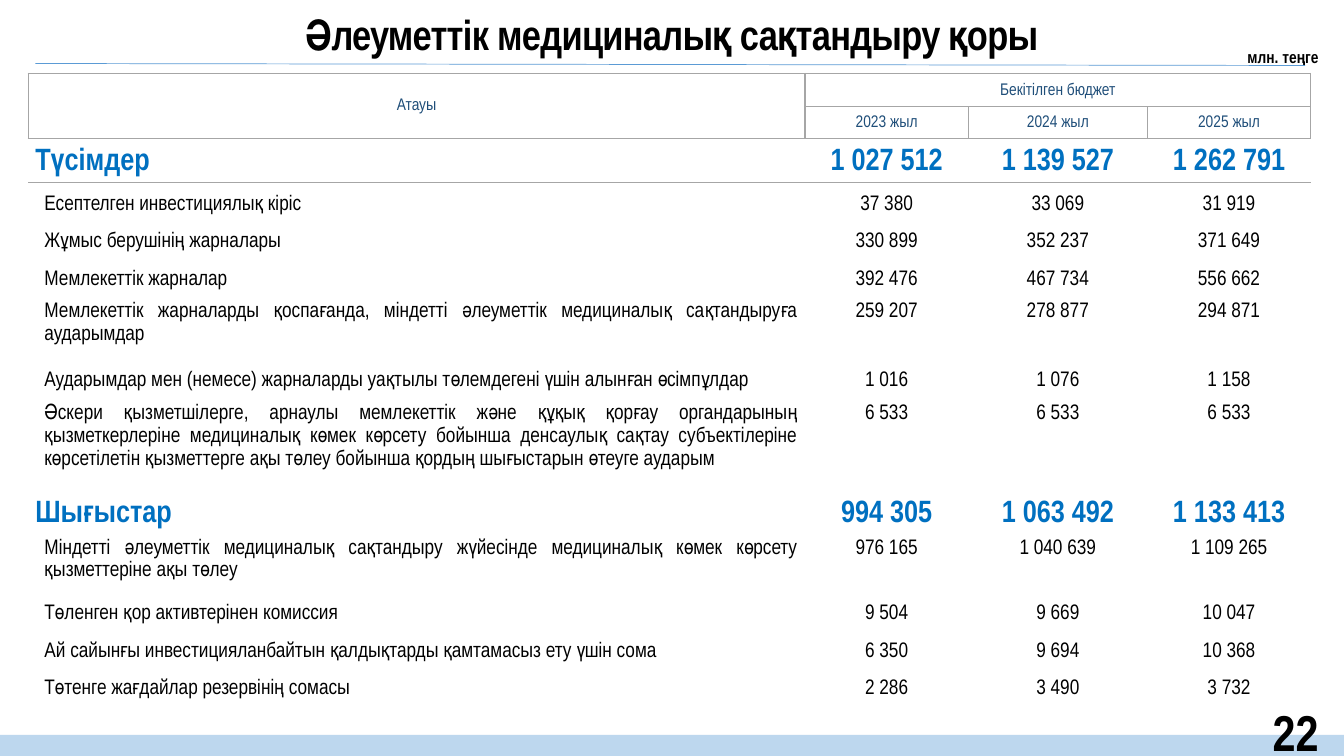
import pptx
import pptx.util
import pptx.dml.color
import pptx.enum.shapes
import pptx.enum.text
import pptx.oxml.ns
from lxml import etree

Cm, Pt = pptx.util.Cm, pptx.util.Pt
ALIGN = pptx.enum.text.PP_ALIGN
ANCHOR = pptx.enum.text.MSO_ANCHOR
COLORS = {"text": "000000", "header": "1F4E79", "total": "0070C0",
          "border": "A6A6A6", "rule": "5B9BD5", "band": "BDD7EE"}
NO_GRID_STYLE = "{2D5ABB26-0587-4C30-8999-92F81FD0307C}"

HEADER = [("Атауы", "Бекітілген бюджет", "", ""),
          ("", "2023 жыл", "2024 жыл", "2025 жыл")]

# Row style, height in cm, label, values by year
ROWS = [
    ("total", 1.12, "Түсімдер", "1 027 512", "1 139 527", "1 262 791"),
    ("item", 1.04, "Есептелген инвестициялық кіріс", "37 380", "33 069", "31 919"),
    ("item", 0.86, "Жұмыс берушінің жарналары", "330 899", "352 237", "371 649"),
    ("item", 1.04, "Мемлекеттік жарналар", "392 476", "467 734", "556 662"),
    ("wrapped", 1.42, "Мемлекеттік жарналарды қоспағанда, міндетті әлеуметтік "
     "медициналық сақтандыруға аударымдар", "259 207", "278 877", "294 871"),
    ("item", 1.12, "Аударымдар мен (немесе) жарналарды уақтылы төлемдегені үшін "
     "алынған өсімпұлдар", "1 016", "1 076", "1 158"),
    ("wrapped", 2.18, "Әскери қызметшілерге, арнаулы мемлекеттік және құқық қорғау "
     "органдарының қызметкерлеріне медициналық көмек көрсету бойынша денсаулық "
     "сақтау субъектілеріне көрсетілетін қызметтерге ақы төлеу бойынша қордың "
     "шығыстарын өтеуге аударым", "6 533", "6 533", "6 533"),
    ("total", 1.19, "Шығыстар", "994 305", "1 063 492", "1 133 413"),
    ("wrapped", 1.42, "Міндетті әлеуметтік медициналық сақтандыру жүйесінде "
     "медициналық көмек көрсету қызметтеріне ақы төлеу",
     "976 165", "1 040 639", "1 109 265"),
    ("item", 0.97, "Төленген қор активтерінен комиссия", "9 504", "9 669", "10 047"),
    ("item", 0.94, "Ай сайынғы инвестицияланбайтын қалдықтарды қамтамасыз ету "
     "үшін сома", "6 350", "9 694", "10 368"),
    ("item", 0.91, "Төтенге жағдайлар резервінің сомасы", "2 286", "3 490", "3 732"),
]


def rgb(name):
    return pptx.dml.color.RGBColor.from_string(COLORS[name])


class Deck:
    def __init__(self, prs, font):
        self.font = font
        self.s = prs.slides.add_slide(prs.slide_layouts[6])

    def run(self, tf, text, size, color, align, bold=False, spacing=1.0):
        p = tf.paragraphs[0]
        p.alignment, p.line_spacing = align, spacing
        r = p.add_run()
        r.text = text
        for name, value in {"name": self.font, "size": Pt(size), "bold": bold}.items():
            setattr(r.font, name, value)
        r.font.color.rgb = rgb(color)
        return r

    def text(self, box, *args, **style):
        tf = self.s.shapes.add_textbox(*map(Cm, box)).text_frame
        tf.word_wrap, tf.vertical_anchor = True, ANCHOR.MIDDLE
        return self.run(tf, *args, **style)

    def rect(self, box, color):
        sp = self.s.shapes.add_shape(pptx.enum.shapes.MSO_SHAPE.RECTANGLE, *map(Cm, box))
        sp.shadow.inherit = False
        sp.fill.solid()
        sp.fill.fore_color.rgb = rgb(color)
        sp.line.fill.background()

    def line(self, ends, color, width):
        straight = pptx.enum.shapes.MSO_CONNECTOR.STRAIGHT
        cxn = self.s.shapes.add_connector(straight, *map(Cm, ends))
        cxn.line.color.rgb, cxn.line.width = rgb(color), Pt(width)
        etree.SubElement(cxn._element.spPr, pptx.oxml.ns.qn("a:effectLst"))

    def table(self, left, top, widths, heights):
        box = (left, top, sum(widths), sum(heights))
        table = self.s.shapes.add_table(len(heights), len(widths), *map(Cm, box)).table
        table.first_row = table.horz_banding = False
        table._tbl.tblPr.find(pptx.oxml.ns.qn("a:tableStyleId")).text = NO_GRID_STYLE
        for column, width in zip(table.columns, widths):
            column.width = Cm(width)
        for row, height in zip(table.rows, heights):
            row.height = Cm(height)
        return table

    def cell(self, cell, margins, anchor, sides=""):
        names = ("margin_left", "margin_top", "margin_right", "margin_bottom")
        for name, value in zip(names, margins):
            setattr(cell, name, Cm(value))
        cell.vertical_anchor = anchor
        qn = pptx.oxml.ns.qn
        for side in sides:
            ln = etree.SubElement(cell._tc.get_or_add_tcPr(), qn(f"a:ln{side}"), w="12700")
            fill = etree.SubElement(ln, qn("a:solidFill"))
            etree.SubElement(fill, qn("a:srgbClr"), val=COLORS["border"])
        cell.fill.background()


def main():
    prs = pptx.Presentation()
    prs.slide_width, prs.slide_height = Cm(33.87), Cm(19.05)
    deck = Deck(prs, "Arial Narrow")

    # Footer band and page number
    deck.rect((0, 18.52, 33.87, 0.53), "band")
    deck.text((29.85, 17.91, 3.63, 1.02), "22", 36, "text", ALIGN.RIGHT, bold=True)

    # Title
    r = deck.text((0, 0, 33.87, 1.57), "Әлеуметтік медициналық сақтандыру қоры",
                  30, "text", ALIGN.CENTER, bold=True, spacing=1.1)
    r.font._element.set("spc", "-50")

    # Budget table
    heights = [0.84, 0.79] + [row[1] for row in ROWS]
    table = deck.table(0.71, 1.85, (19.58, 4.11, 4.52, 4.11), heights)
    table.cell(0, 0).merge(table.cell(1, 0))
    table.cell(0, 1).merge(table.cell(0, 3))
    for i, labels in enumerate(HEADER):
        for j, label in enumerate(labels):
            cell = table.cell(i, j)
            deck.cell(cell, (0.03, 0.03, 0.03, 0), ANCHOR.MIDDLE, "LRTB")
            if label:
                deck.run(cell.text_frame, label, 12, "header", ALIGN.CENTER)

    for i, (kind, _, *texts) in enumerate(ROWS, len(HEADER)):
        total = kind == "total"
        size, color = (22, "total") if total else (15, "text")
        anchor = ANCHOR.TOP if kind == "wrapped" else ANCHOR.MIDDLE
        for j, text in enumerate(texts):
            cell = table.cell(i, j)
            indent = 0.18 if total or j else 0.41
            align = ALIGN.CENTER if j else ALIGN.LEFT if total else ALIGN.JUSTIFY
            deck.cell(cell, (indent, 0, 0.18, 0), anchor, "T" if i == len(HEADER) else "")
            deck.run(cell.text_frame, text, size, color, align, total, 1.15)

    # Unit label and rule under the title
    deck.text((30.43, 0.79, 3.05, 1.22), "млн. теңге", 12, "text", ALIGN.RIGHT,
              bold=True, spacing=1.1)
    deck.line((0.89, 1.6, 32.89, 1.65), "rule", 0.5)

    prs.save("out.pptx")


if __name__ == "__main__":
    main()
